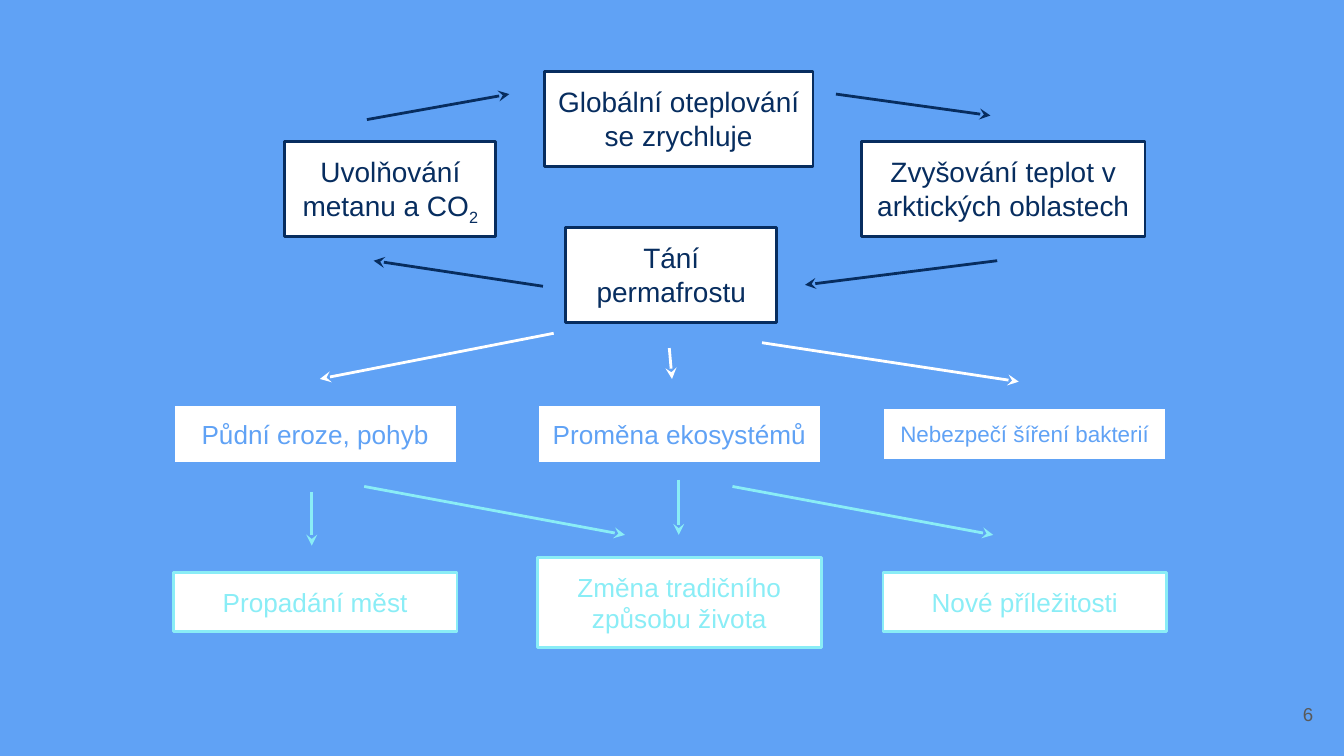
from lxml import etree
from pptx import Presentation
from pptx.dml.color import RGBColor
from pptx.enum.shapes import MSO_CONNECTOR, MSO_SHAPE
from pptx.enum.text import MSO_ANCHOR, MSO_AUTO_SIZE, PP_ALIGN
from pptx.oxml.ns import qn
from pptx.util import Inches, Pt

BLUE = RGBColor(0x60, 0xA2, 0xF5)
NAVY = RGBColor(0x07, 0x2D, 0x5F)
AQUA = RGBColor(0x8A, 0xED, 0xF6)
WHITE = RGBColor(0xFF, 0xFF, 0xFF)
GRAY = RGBColor(0x59, 0x59, 0x59)

FRAME = {
    "word_wrap": True,
    "margin_left": Inches(0.1),
    "margin_right": Inches(0.1),
    "margin_top": Inches(0.1),
    "margin_bottom": Inches(0.1),
}
NUMBER = {"vertical_anchor": MSO_ANCHOR.MIDDLE, "auto_size": MSO_AUTO_SIZE.NONE}
BOX = {
    "vertical_anchor": MSO_ANCHOR.TOP,
    "auto_size": MSO_AUTO_SIZE.SHAPE_TO_FIT_TEXT,
}


def write(sp, text, size, color, align, frame):
    tf = sp.text_frame
    for name, value in {**FRAME, **frame}.items():
        setattr(tf, name, value)
    p = tf.paragraphs[0]
    p.alignment = align
    for i, part in enumerate(text.split("_")):
        r = p.add_run()
        r.text = part
        for name, value in {"name": "Arial", "size": Pt(size)}.items():
            setattr(r.font, name, value)
        r.font.color.rgb = color
        if i:
            r.font._element.set("baseline", "-25000")


prs = Presentation()
prs.slide_width = Inches(10)
prs.slide_height = prs.slide_width * 9 // 16
s = prs.slides.add_slide(prs.slide_layouts[6])
s.background.fill.solid()
s.background.fill.fore_color.rgb = BLUE

number = s.shapes.add_textbox(Inches(9.27), Inches(5.1), Inches(0.6), Inches(0.43))
write(number, "6", 10, GRAY, PP_ALIGN.RIGHT, NUMBER)

LEFT, CENTER, RIGHT = 1.29, 4, 6.57
WIDE = 2.11
boxes = [
    ("Uvolňování metanu a CO_2", 2.12, 1.05, 1.57, 0.71, 15, NAVY),
    ("Tání permafrostu", 4.21, 1.69, 1.57, 0.71, 15, NAVY),
    ("Globální oteplování se zrychluje", 4.05, 0.53, 2, 0.71, 15, NAVY),
    ("Zvyšování teplot v arktických oblastech", 6.41, 1.05, WIDE, 0.71, 15, NAVY),
    ("Půdní eroze, pohyb", LEFT, 3.01, WIDE, 0.44, 14, BLUE),
    ("Nebezpečí šíření bakterií", RIGHT, 3.03, WIDE, 0.4, 12, BLUE),
    ("Proměna ekosystémů", CENTER, 3.01, WIDE, 0.44, 14, BLUE),
    ("Propadání měst", LEFT, 4.26, WIDE, 0.44, 14, AQUA),
    ("Nové příležitosti", RIGHT, 4.26, WIDE, 0.44, 14, AQUA),
    ("Změna tradičního způsobu života", CENTER, 4.15, WIDE, 0.67, 14, AQUA),
]
for text, x, y, w, h, size, color in boxes:
    sp = s.shapes.add_shape(
        MSO_SHAPE.RECTANGLE, Inches(x), Inches(y), Inches(w), Inches(h)
    )
    sp.shadow.inherit = False
    sp.fill.solid()
    sp.fill.fore_color.rgb = WHITE
    sp.line.color.rgb = color
    sp.line.width = Pt(1.5)
    write(sp, text, size, color, PP_ALIGN.CENTER, BOX)

arrows = {
    NAVY: [
        (2.73, 0.89, 3.79, 0.7),
        (6.22, 0.7, 7.37, 0.86),
        (4.04, 2.13, 2.78, 1.94),
        (7.42, 1.94, 5.99, 2.12),
    ],
    WHITE: [
        (4.12, 2.48, 2.38, 2.82),
        (4.98, 2.59, 5, 2.82),
        (5.67, 2.55, 7.58, 2.84),
    ],
    AQUA: [
        (2.32, 3.66, 2.32, 4.06),
        (2.71, 3.62, 4.65, 3.98),
        (5.05, 3.57, 5.05, 3.98),
        (5.45, 3.62, 7.39, 3.98),
    ],
}
for color, ends in arrows.items():
    for points in ends:
        arrow = s.shapes.add_connector(
            MSO_CONNECTOR.STRAIGHT, *[Inches(v) for v in points]
        )
        arrow.line.color.rgb = color
        arrow.line.width = Pt(1.5)
        ln = arrow.line._get_or_add_ln()
        etree.SubElement(ln, qn("a:tailEnd"), type="stealth")
        etree.SubElement(arrow._element.spPr, qn("a:effectLst"))

prs.save("out.pptx")
